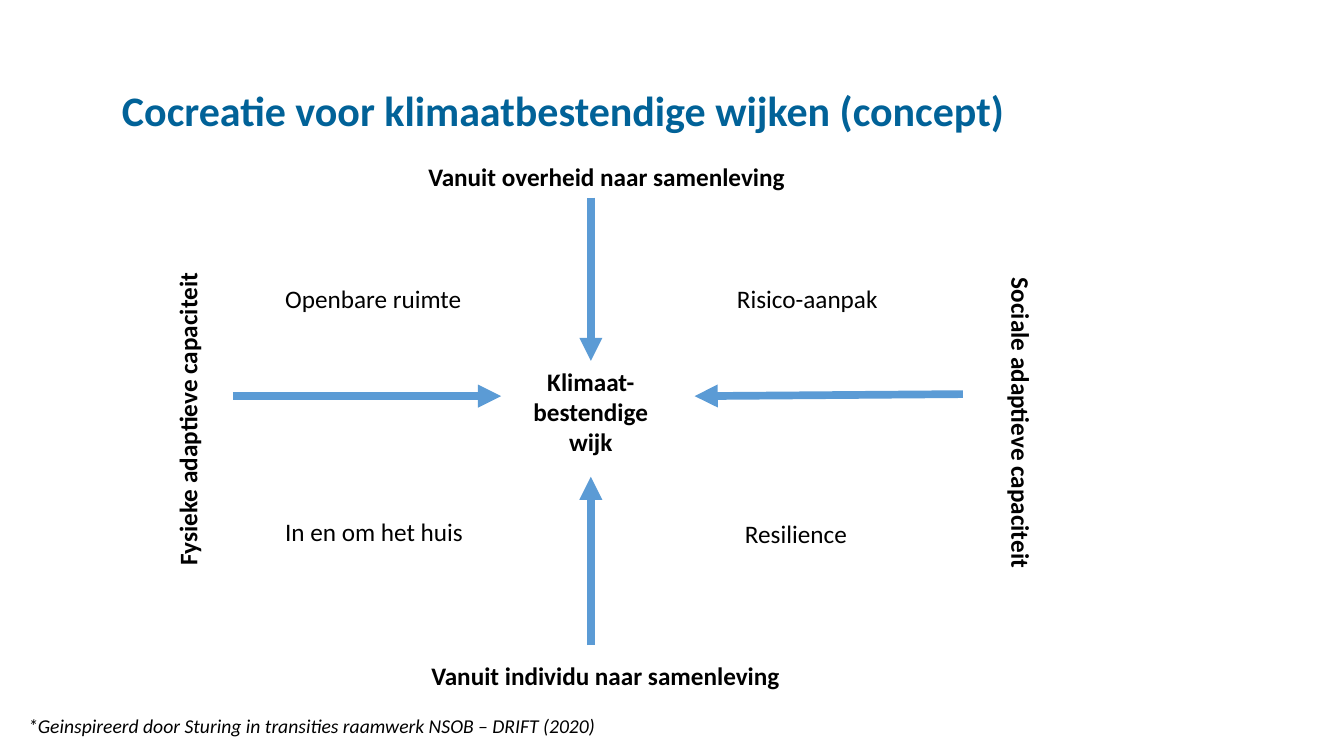
from dataclasses import dataclass

from lxml import etree
from pptx import Presentation
from pptx.dml.color import RGBColor
from pptx.enum import shapes, text
from pptx.oxml import ns
from pptx.util import Inches, Pt


@dataclass(frozen=True)
class Theme:
    font: str = "Calibri"
    title_color: RGBColor = RGBColor.from_string("016298")
    text_color: RGBColor = RGBColor.from_string("000000")
    arrow_color: RGBColor = RGBColor.from_string("5B9BD5")
    title_size: int = 30
    label_size: int = 18
    note_size: int = 14
    arrow_width: float = 5.5


@dataclass(frozen=True)
class Box:
    left: float
    top: float
    width: float
    height: float

    def inside(self, left, top, width, height):
        return Box(self.left + left, self.top + top, width, height)


THEME = Theme()
LABEL_WIDTH = 4.6
QUADRANT_WIDTH = 2.89
LINE_HEIGHT = 0.4


def place(shape, box):
    shape.left, shape.top = Inches(box.left), Inches(box.top)
    shape.width, shape.height = Inches(box.width), Inches(box.height)


def format_text(shape, size, color, bold=False, italic=False, align=text.PP_ALIGN.LEFT):
    for paragraph in shape.text_frame.paragraphs:
        paragraph.alignment = align
        for run in paragraph.runs:
            run.font.name = THEME.font
            run.font.size = Pt(size)
            run.font.color.rgb = color
            run.font.bold = bold
            run.font.italic = italic


def add_label(slide, box, wording, size=THEME.label_size, rotation=0, **style):
    shape = slide.shapes.add_textbox(0, 0, 0, 0)
    place(shape, box)
    shape.rotation = rotation
    shape.text_frame.word_wrap = True
    shape.text_frame.text = wording
    format_text(shape, size, THEME.text_color, **style)


def add_arrow(slide, box, start, end):
    points = [Inches(value) for x, y in (start, end) for value in (box.left + x, box.top + y)]
    arrow = slide.shapes.add_connector(shapes.MSO_CONNECTOR.STRAIGHT, *points)
    arrow.line.color.rgb = THEME.arrow_color
    arrow.line.width = Pt(THEME.arrow_width)
    head = etree.SubElement(arrow.line._get_or_add_ln(), ns.qn("a:tailEnd"))
    head.set("type", "triangle")
    etree.SubElement(arrow._element.spPr, ns.qn("a:effectLst"))


def add_title(slide, box):
    title = slide.shapes.title
    place(title, box)
    frame = title.text_frame
    frame.text = "Cocreatie voor klimaatbestendige wijken (concept)"
    frame.auto_size = text.MSO_AUTO_SIZE.NONE
    frame.vertical_anchor = text.MSO_ANCHOR.MIDDLE
    frame.margin_top = frame.margin_bottom = Inches(0.04)
    frame.paragraphs[0].line_spacing = 0.9
    format_text(title, THEME.title_size, THEME.title_color, bold=True)


def add_axes(slide, box):
    hub_x, hub_y = 4.2, 2.38
    for start, end in (
        ((hub_x, 0.41), (hub_x, 2.03)),
        ((hub_x, 4.85), (hub_x, 3.18)),
        ((0.65, hub_y), (3.31, hub_y)),
        ((7.89, 2.36), (5.23, hub_y)),
    ):
        add_arrow(slide, box, start, end)
    for wording, left, top, rotation in (
        ("Vanuit overheid naar samenleving", 2.49, 0, 0),
        ("Vanuit individu naar samenleving", 2.52, 4.95, 0),
        ("Fysieke adaptieve capaciteit", -2.1, 1.66, 270),
        ("Sociale adaptieve capaciteit", 6.17, 3.21, 90),
    ):
        label_box = box.inside(left, top, LABEL_WIDTH, LINE_HEIGHT)
        add_label(slide, label_box, wording, rotation=rotation, bold=True)
    hub_box = box.inside(hub_x - 0.7, 2.03, 1.4, 1.01)
    add_label(slide, hub_box, "Klimaat- bestendige wijk", bold=True, align=text.PP_ALIGN.CENTER)


def add_quadrants(slide, box):
    for wording, left, top in (
        ("Openbare ruimte", 1.07, 1.21),
        ("In en om het huis", 1.07, 3.52),
        ("Risico-aanpak", 5.55, 1.21),
        ("Resilience", 5.63, 3.54),
    ):
        add_label(slide, box.inside(left, top, QUADRANT_WIDTH, LINE_HEIGHT), wording)


def add_source_note(slide, box):
    wording = "*Geinspireerd door Sturing in transities raamwerk NSOB – DRIFT (2020)"
    add_label(slide, box, wording, size=THEME.note_size, italic=True)


def main():
    presentation = Presentation()
    presentation.slide_width = Inches(13.33)
    presentation.slide_height = Inches(7.5)
    slide = presentation.slides.add_slide(presentation.slide_layouts[5])
    diagram = Box(1.66, 1.55, 8.67, 5.35)
    add_title(slide, Box(1.11, 0.87, 11.56, 0.5))
    add_axes(slide, diagram)
    add_quadrants(slide, diagram)
    add_source_note(slide, Box(0.18, 7.03, 9.29, 0.34))
    presentation.save("out.pptx")


if __name__ == "__main__":
    main()
